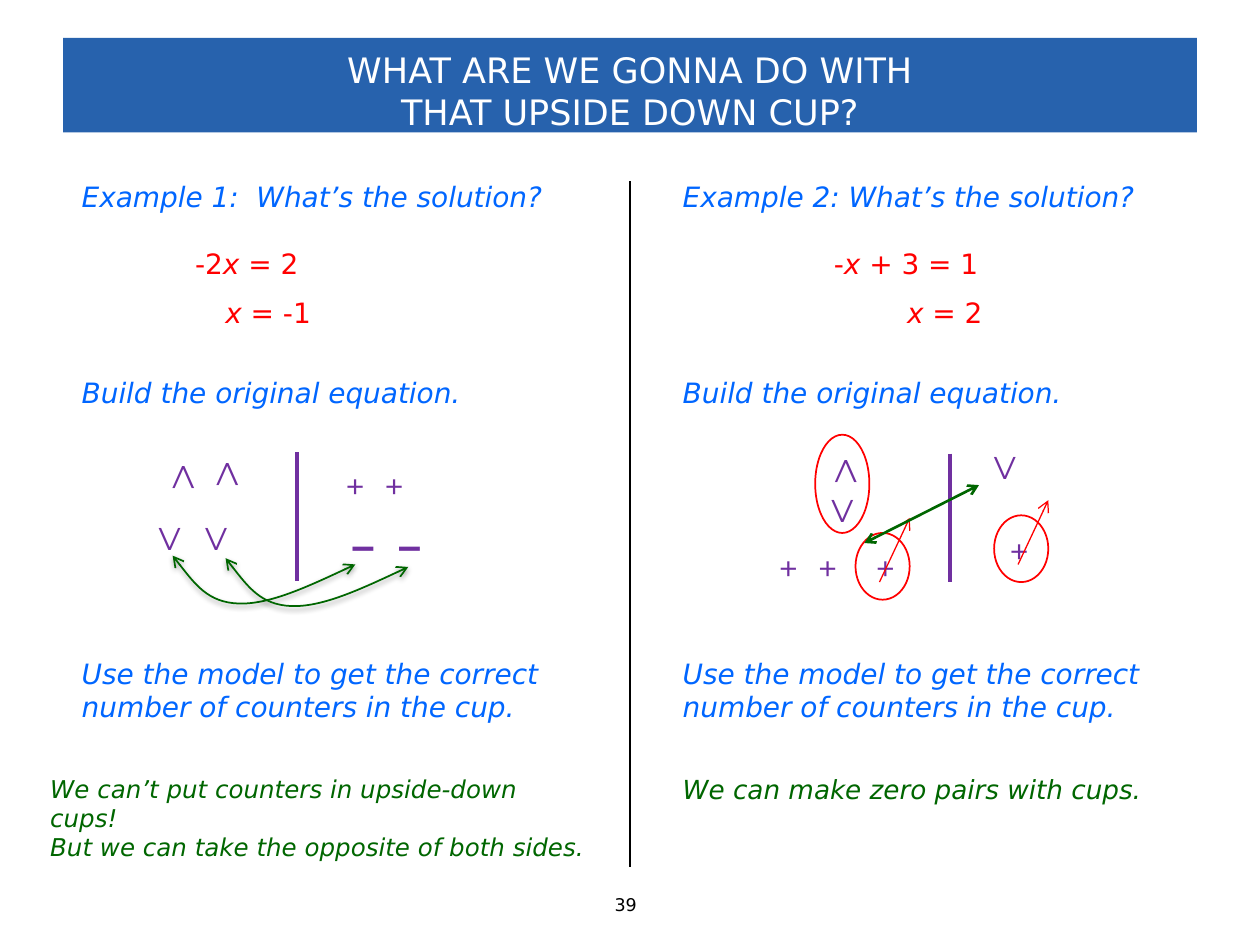
from dataclasses import dataclass
from typing import NamedTuple

import lxml.etree
import pptx
import pptx.dml.color
import pptx.enum.shapes
import pptx.enum.text
import pptx.oxml.ns
import pptx.util

Inches, Pt = pptx.util.Inches, pptx.util.Pt
RGB = pptx.dml.color.RGBColor.from_string
qn = pptx.oxml.ns.qn
OVAL = pptx.enum.shapes.MSO_SHAPE.OVAL
STRAIGHT = pptx.enum.shapes.MSO_CONNECTOR.STRAIGHT
AUTO = pptx.enum.text.MSO_AUTO_SIZE
MIDDLE = pptx.enum.text.MSO_ANCHOR.MIDDLE
CENTER = pptx.enum.text.PP_ALIGN.CENTER


class Style(NamedTuple):
    size: float
    color: str
    face: str = "DejaVu Sans"
    italic: bool = False
    bold: bool = False
    var: str = ""  # the one part set in italics, if any


class Theme:
    band, white, black = "2762AD", "FFFFFF", "000000"
    blue, red, green, violet = "0066FF", "FF0000", "006600", "7030A0"
    title = Style(20, white)
    page = Style(10, black)
    task = Style(16, blue, italic=True)
    math = Style(16, red, var="x")
    note = Style(14, green, italic=True)
    hint = Style(15, green, italic=True)
    cup = Style(18, violet, "Montserrat")
    plus = Style(20, violet, "Montserrat")
    minus = Style(24, violet, "Arial", bold=True)


@dataclass
class Label:
    left: float
    top: float
    width: float
    height: float
    text: str
    style: Style
    turn: int = 0
    tab: float = 0


@dataclass
class Line:
    start: tuple
    end: tuple
    color: str
    weight: float
    head: bool = False
    tail: bool = False


@dataclass
class Ring:
    left: float
    top: float
    height: float
    width: float = 0.43


def assign(item, values: dict) -> None:
    for name, value in values.items():
        setattr(item, name, value)


def style_run(run, style: Style, italic: bool) -> None:
    assign(run.font, {"name": style.face, "size": Pt(style.size),
                      "bold": style.bold, "italic": italic})
    run.font.color.rgb = RGB(style.color)


def add_tab(para, stop: float) -> None:
    tabs = lxml.etree.SubElement(para._p.get_or_add_pPr(), qn("a:tabLst"))
    lxml.etree.SubElement(tabs, qn("a:tab"), pos=str(Inches(stop)), algn="l")


def add_label(shapes, label: Label):
    box = shapes.add_textbox(*map(Inches, (label.left, label.top,
                                           label.width, label.height)))
    box.rotation = label.turn
    frame, style = box.text_frame, label.style
    assign(frame, {"word_wrap": True, "auto_size": AUTO.SHAPE_TO_FIT_TEXT})
    for index, text in enumerate(label.text.split("\n")):
        para = frame.add_paragraph() if index else frame.paragraphs[0]
        if label.tab:
            add_tab(para, label.tab)
        parts = text.partition(style.var) if style.var else (text,)
        for part in filter(None, parts):
            run = para.add_run()
            run.text = part
            style_run(run, style, style.italic or part == style.var)
    return box


def set_line(line, color: str, weight: float,
             head: bool = False, tail: bool = False) -> None:
    line.color.rgb = RGB(color)
    line.width = Pt(weight)
    for end, shown in (("a:headEnd", head), ("a:tailEnd", tail)):
        if shown:
            lxml.etree.SubElement(line._get_or_add_ln(), qn(end), type="arrow")


def add_line(shapes, line: Line) -> None:
    link = shapes.add_connector(STRAIGHT, *map(Inches, line.start + line.end))
    set_line(link.line, line.color, line.weight, line.head, line.tail)
    lxml.etree.SubElement(link._element.spPr, qn("a:effectLst"))


def add_ring(shapes, ring: Ring) -> None:
    oval = shapes.add_shape(OVAL, *map(Inches, (ring.left, ring.top,
                                                ring.width, ring.height)))
    oval.shadow.inherit = False
    oval.fill.background()
    set_line(oval.line, Theme.red, 1)


def add_curve(shapes, points: list) -> None:
    """Draw a shadowed double arrow; after the start, each three points
    make one Bezier segment."""
    start, *rest = [tuple(map(Inches, point)) for point in points]
    pen = shapes.build_freeform(*start)
    pen.add_line_segments(rest, close=False)
    curve = pen.convert_to_shape()
    curve.fill.background()
    set_line(curve.line, Theme.green, 1, head=True, tail=True)
    steps = curve._element.xpath(".//a:lnTo")
    track = steps[0].getparent()
    for first in range(0, len(steps), 3):
        bend = lxml.etree.SubElement(track, qn("a:cubicBezTo"))
        for step in steps[first:first + 3]:
            bend.append(step[0])
            track.remove(step)
    curve.shadow.inherit = False
    shade = lxml.etree.SubElement(
        curve._element.spPr.find(qn("a:effectLst")), qn("a:outerShdw"),
        blurRad=str(Pt(3.1)), dist=str(Pt(1.6)), dir="5400000", rotWithShape="0")
    tint = lxml.etree.SubElement(shade, qn("a:srgbClr"), val=Theme.black)
    lxml.etree.SubElement(tint, qn("a:alpha"), val="38000")


def set_title(title, text: str) -> None:
    assign(title, {"left": Inches(0.5), "top": Inches(0.3),
                   "width": Inches(9), "height": Inches(0.75)})
    title.fill.solid()
    title.fill.fore_color.rgb = RGB(Theme.band)
    frame = title.text_frame
    frame.text = text
    assign(frame, {"vertical_anchor": MIDDLE, "auto_size": AUTO.NONE,
                   "margin_top": Inches(0.09), "margin_bottom": 0})
    para = frame.paragraphs[0]
    para.alignment = CENTER
    for run in para.runs:
        style_run(run, Theme.title, False)


TASKS = [(2.93, 0.37, "Build the original equation."),
         (5.16, 0.64, "Use the model to get the correct number of counters in the cup.")]
COLUMNS = [(0.55, "Example 1:  What’s the solution?"),
           (5.32, "Example 2: What’s the solution?")]
LABELS = [
    Label(1.45, 1.91, 1.15, 0.37, "-2x = 2", Theme.math),
    Label(1.69, 2.3, 0.98, 0.37, "x = -1", Theme.math),
    Label(6.52, 1.91, 1.6, 0.37, "-x + 3 = 1", Theme.math),
    Label(7.1, 2.3, 1.02, 0.37, "x = 2", Theme.math),
    Label(0.3, 6.09, 4.5, 0.67, "We can’t put counters in upside-down cups!\n"
          "But we can take the opposite of both sides.", Theme.note),
    Label(5.32, 6.09, 3.93, 0.35, "We can make zero pairs with cups.", Theme.hint),
    Label(1.29, 3.6, 0.35, 0.4, "V", Theme.cup, turn=180),
    Label(1.64, 3.58, 0.35, 0.4, "V", Theme.cup, turn=180),
    Label(1.16, 4.07, 0.95, 0.4, "V\tV", Theme.cup, tab=0.37),
    Label(2.64, 3.64, 0.82, 0.44, "+\t+", Theme.plus, tab=0.31),
    Label(2.69, 4.07, 0.96, 0.5, "–\t–", Theme.minus, tab=0.37),
    Label(6.55, 3.55, 0.35, 0.4, "V", Theme.cup, turn=180),
    Label(6.5, 3.85, 0.62, 0.4, "V", Theme.cup),
    Label(7.79, 3.51, 0.62, 0.4, "V", Theme.cup),
    Label(6.08, 4.29, 0.85, 0.44, "+\t+", Theme.plus, tab=0.31),
    Label(6.85, 4.29, 0.37, 0.44, "+", Theme.plus),
    Label(7.91, 4.15, 0.49, 0.44, "+", Theme.plus),
]
LINES = [
    Line((5, 1.44), (5, 6.88), Theme.black, 1),
    Line((2.36, 3.59), (2.36, 4.61), Theme.violet, 2.25),
    Line((7.54, 3.6), (7.54, 4.62), Theme.violet, 2.25),
    Line((6.86, 4.31), (7.77, 3.85), Theme.green, 1.5, head=True, tail=True),
]
CURVE = [(1.37, 4.41), (1.51, 4.59), (1.65, 4.78), (1.89, 4.79),
         (2.13, 4.8), (2.48, 4.64), (2.82, 4.48)]
STRIKES = [(6.79, 4.23), (7.89, 4.09)]


def main() -> None:
    deck = pptx.Presentation()
    assign(deck, {"slide_width": Inches(10), "slide_height": Inches(7.5)})
    slide = deck.slides.add_slide(deck.slide_layouts[5])
    shapes = slide.shapes
    set_title(shapes.title, "WHAT ARE WE GONNA DO WITH\vTHAT UPSIDE DOWN CUP?")
    page = add_label(shapes, Label(4.78, 7.05, 0.44, 0.27, "39", Theme.page))
    page.text_frame.word_wrap = False
    for left, head in COLUMNS:
        for top, high, text in [(1.38, 0.37, head)] + TASKS:
            add_label(shapes, Label(left, top, 4.18, high, text, Theme.task))
    for label in LABELS:
        add_label(shapes, label)
    for shift in ((0, 0), (0.42, 0.02)):
        add_curve(shapes, [(x + shift[0], y + shift[1]) for x, y in CURVE])
    add_ring(shapes, Ring(6.47, 3.45, 0.78))
    for left, top in STRIKES:
        group = shapes.add_group_shape().shapes
        add_ring(group, Ring(left, top, 0.53))
        add_line(group, Line((left + 0.19, top + 0.39), (left + 0.43, top - 0.12),
                             Theme.red, 0.75, tail=True))
    for line in LINES:
        add_line(shapes, line)
    deck.save("out.pptx")


if __name__ == "__main__":
    main()
